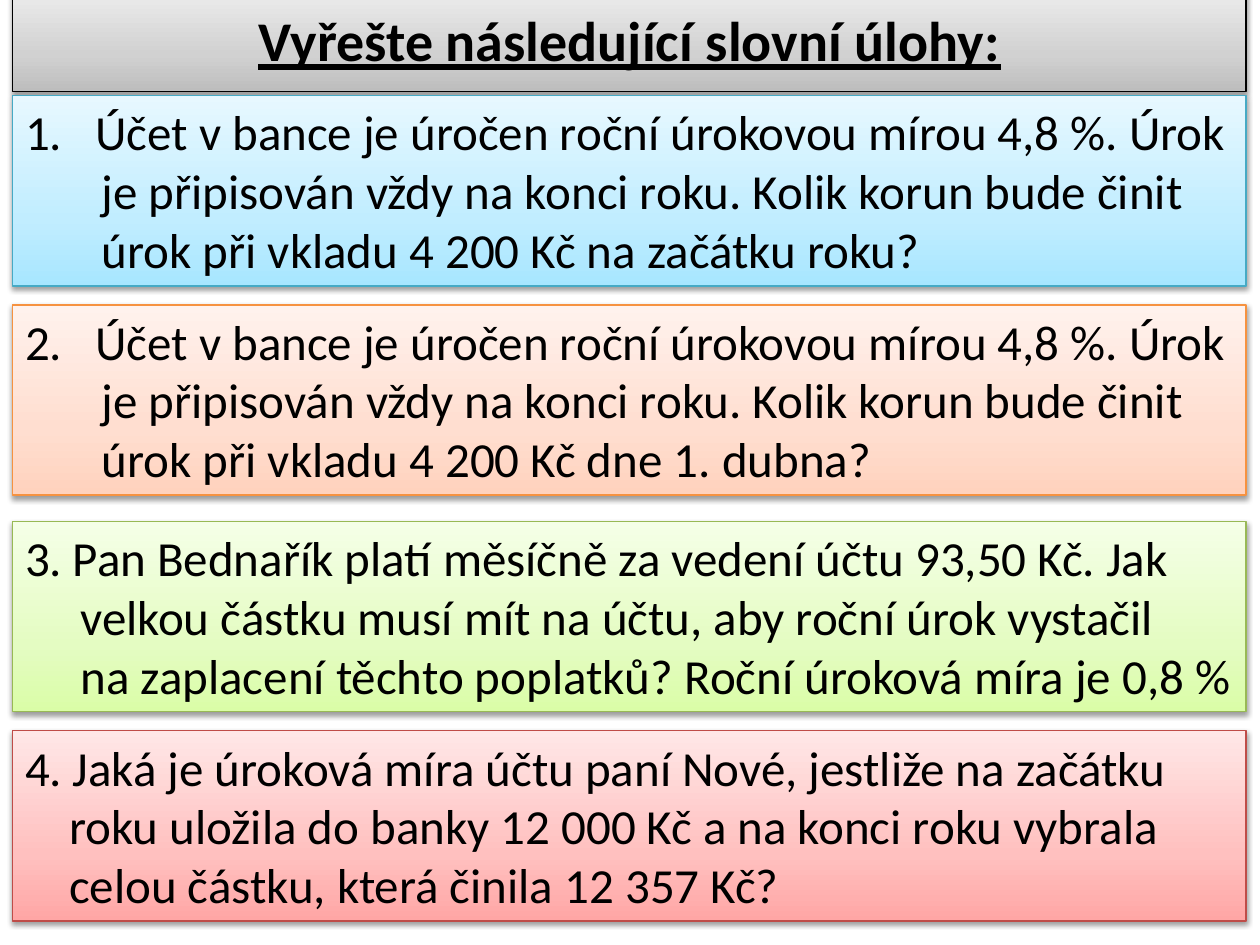
from lxml.etree import SubElement
from copy import deepcopy
from pptx import Presentation
from pptx.dml.color import RGBColor
from pptx.enum.shapes import MSO_SHAPE
from pptx.enum.text import MSO_ANCHOR, MSO_AUTO_SIZE, PP_ALIGN
from pptx.oxml.ns import qn
from pptx.util import Inches, Pt

BLACK = RGBColor(0, 0, 0)
GREY = [RGBColor.from_string(c) for c in ("BDBDBD", "D1D1D1", "EEEEEE")]
BLUE = [RGBColor.from_string(c) for c in ("A7E6FF", "C1EDFF", "E7F8FF")]
ORANGE = [RGBColor.from_string(c) for c in ("FFD2BD", "FFDED0", "FFF2ED")]
GREEN = [RGBColor.from_string(c) for c in ("DAFDA7", "E4FCC2", "F5FFE7")]
RED = [RGBColor.from_string(c) for c in ("FFA6A5", "FFC0BF", "FFE7E7")]
BLUE_LINE = RGBColor(0x46, 0xAA, 0xC5)
ORANGE_LINE = RGBColor(0xF6, 0x92, 0x40)
GREEN_LINE = RGBColor(0x98, 0xB9, 0x55)
RED_LINE = RGBColor(0xBF, 0x4C, 0x48)

LEFT, WIDTH = Inches(0.1), Inches(9.79)
BODY = {"name": "Calibri", "size": Pt(28), "bold": False}
HEAD = {"name": "Calibri", "size": Pt(32), "bold": True, "underline": True}


def paint(shape, shades, edge):
    """Three-stop gradient rising from the bottom, thin edge, soft shadow."""
    fill = shape.fill
    fill.gradient()
    fill.gradient_angle = 90
    stops = shape._element.spPr.find(".//" + qn("a:gsLst"))
    stops.insert(1, deepcopy(stops[0]))
    for stop, place, shade in zip(fill.gradient_stops, (0, 0.35, 1), shades):
        stop.position = place
        stop.color.rgb = shade
    shape.line.color.rgb = edge
    shape.line.width = Pt(0.75)
    shape.shadow.inherit = False
    effects = shape._element.spPr.find(qn("a:effectLst"))
    shadow = SubElement(effects, qn("a:outerShdw"), blurRad="40000",
                        dist="20000", dir="5400000", rotWithShape="0")
    color = SubElement(shadow, qn("a:srgbClr"), val="000000")
    SubElement(color, qn("a:alpha"), val="38000")


def style(para, look, align):
    para.alignment = align
    for key, value in look.items():
        setattr(para.font, key, value)
    para.font.color.rgb = BLACK


deck = Presentation()
deck.slide_width, deck.slide_height = Inches(10), Inches(7.5)
slide = deck.slides.add_slide(deck.slide_layouts[5])

# Title bar
title = slide.shapes.title
title.left, title.top = LEFT, Inches(-0.01)
title.width, title.height = WIDTH, Inches(0.64)
paint(title, GREY, BLACK)
title.text_frame.text = "Vyřešte následující slovní úlohy:"
title.text_frame.auto_size = MSO_AUTO_SIZE.SHAPE_TO_FIT_TEXT
style(title.text_frame.paragraphs[0], HEAD, PP_ALIGN.CENTER)

# Tasks: top, shades, edge, hang of the number, indent of later lines, lines
tasks = [
    (0.76, BLUE, BLUE_LINE, 0.56, 0.61, [
        "Účet v bance je úročen roční úrokovou mírou 4,8 %. Úrok",
        "je připisován vždy na konci roku. Kolik korun bude činit",
        "úrok při vkladu 4 200 Kč na začátku roku?"]),
    (2.42, ORANGE, ORANGE_LINE, 0.56, 0.61, [
        "Účet v bance je úročen roční úrokovou mírou 4,8 %. Úrok",
        "je připisován vždy na konci roku. Kolik korun bude činit",
        "úrok při vkladu 4 200 Kč dne 1. dubna?"]),
    (4.14, GREEN, GREEN_LINE, 0.38, 0.44, [
        "Pan Bednařík platí měsíčně za vedení účtu 93,50 Kč. Jak",
        "velkou částku musí mít na účtu, aby roční úrok vystačil",
        "na zaplacení těchto poplatků? Roční úroková míra je 0,8 %"]),
    (5.8, RED, RED_LINE, 0.38, 0.35, [
        "Jaká je úroková míra účtu paní Nové, jestliže na začátku",
        "roku uložila do banky 12 000 Kč a na konci roku vybrala",
        "celou částku, která činila 12 357 Kč?"]),
]
for number, (top, shades, edge, hang, indent, lines) in enumerate(tasks, 1):
    box = slide.shapes.add_shape(MSO_SHAPE.RECTANGLE, LEFT, Inches(top),
                                 WIDTH, Inches(1.51))
    box.name = f"Task {number}"
    paint(box, shades, edge)
    frame = box.text_frame
    frame.text = "\n".join(lines)
    frame.word_wrap = True
    frame.vertical_anchor = MSO_ANCHOR.TOP
    frame.auto_size = MSO_AUTO_SIZE.SHAPE_TO_FIT_TEXT
    for row, para in enumerate(frame.paragraphs):
        props = para._p.get_or_add_pPr()
        if row == 0:
            props.set("marL", str(Inches(hang)))
            props.set("indent", str(-Inches(hang)))
            SubElement(props, qn("a:buFont"), typeface="+mj-lt")
            SubElement(props, qn("a:buAutoNum"), type="arabicPeriod",
                       startAt=str(number))
        else:
            props.set("marL", str(Inches(indent)))
        style(para, BODY, PP_ALIGN.LEFT)

deck.save("out.pptx")
